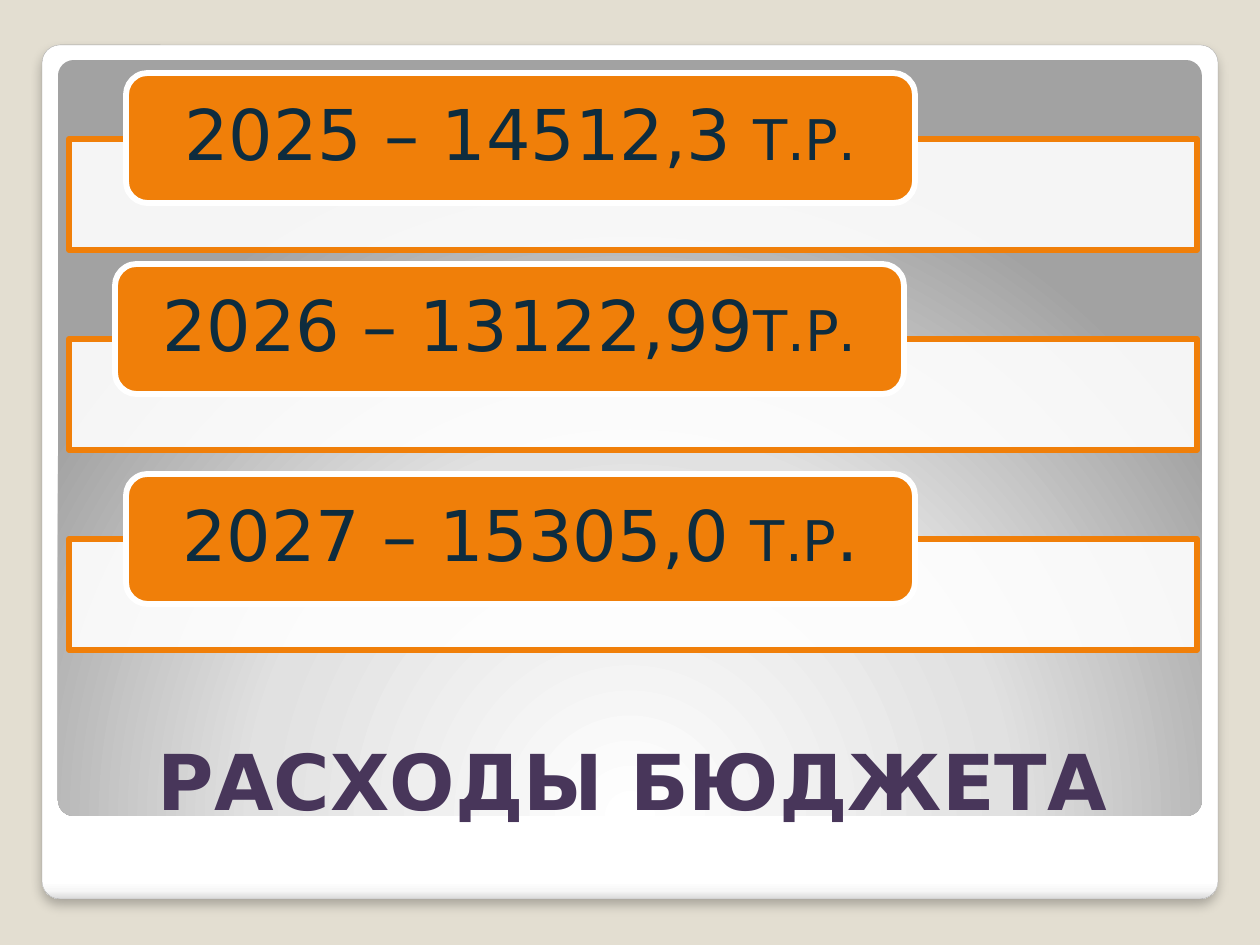
from dataclasses import dataclass

from lxml import etree
from pptx import Presentation
from pptx.dml.color import RGBColor
from pptx.enum.shapes import MSO_SHAPE
from pptx.enum.text import MSO_ANCHOR, PP_ALIGN
from pptx.oxml import parse_xml
from pptx.oxml.ns import nsdecls, qn
from pptx.util import Emu, Pt

RECTANGLE = MSO_SHAPE.RECTANGLE
ROUNDED = MSO_SHAPE.ROUNDED_RECTANGLE
CENTER = PP_ALIGN.CENTER
MIDDLE, BOTTOM = MSO_ANCHOR.MIDDLE, MSO_ANCHOR.BOTTOM
PX_PER_INCH = 126


@dataclass(frozen=True)
class Theme:
    font: str = "DejaVu Sans"
    background: str = "E3DED1"
    white: str = "FFFFFF"
    orange: str = "F07F09"
    frame_line: str = "A4A4A4"
    label_text: str = "0E2C3E"
    title_text: str = "48365A"
    frame_stops: tuple = ((0, "FFFFFF"), (98, "FFFFFF"), (99, "F7F7F7"), (100, "DADADA"))
    panel_stops: tuple = ((0, "FFFFFF"), (55, "E1E1E1"), (100, "A2A2A2"))
    title_size: int = 44
    amount_size: int = 40
    unit_size: int = 32
    line_width: float = 3.35


THEME = Theme()

# Per year: label left and top, then text runs with their sizes
BUDGET_ROWS = (
    (126, 73, (("2025 – 14512,3 ", THEME.amount_size), ("Т.Р.", THEME.unit_size))),
    (115, 264, (("2026 – 13122,99", THEME.amount_size), ("Т.Р.", THEME.unit_size))),
    (126, 474, (("2027 – 15305,0 ", THEME.amount_size), ("Т.Р", THEME.unit_size),
                (".", THEME.amount_size))),
)
BAR_TOP, BAR_STEP = 139, 200


def px(value):
    return Emu(round(value * 914400 / PX_PER_INCH))


def color(value):
    return RGBColor.from_string(value)


def add_box(slide, kind, left, top, width, height, fill=None, line=None,
            line_width=THEME.line_width, corner=None):
    shape = slide.shapes.add_shape(kind, px(left), px(top), px(width), px(height))
    shape.shadow.inherit = False
    if corner is not None:
        shape.adjustments[0] = corner
    if fill:
        shape.fill.solid()
        shape.fill.fore_color.rgb = color(fill)
    else:
        shape.fill.background()
    if line:
        shape.line.color.rgb = color(line)
        shape.line.width = Pt(line_width)
    else:
        shape.line.fill.background()
    return shape


def set_gradient(shape, stops, direction):
    stop_xml = "".join(
        f'<a:gs pos="{position * 1000}"><a:srgbClr val="{value}"/></a:gs>'
        for position, value in stops)
    gradient = parse_xml(f'<a:gradFill {nsdecls("a")} rotWithShape="1">'
                         f'<a:gsLst>{stop_xml}</a:gsLst>{direction}</a:gradFill>')
    properties = shape._element.spPr
    properties.replace(properties.find(qn("a:noFill")), gradient)


def set_opacity(shape, percent):
    fill_color = shape._element.spPr.find(qn("a:solidFill"))[0]
    etree.SubElement(fill_color, qn("a:alpha"), val=str(percent * 1000))


def add_soft_shadow(shape):
    effects = shape._element.spPr.find(qn("a:effectLst"))
    effects.append(parse_xml(
        f'<a:outerShdw {nsdecls("a")} blurRad="{Pt(6)}" dist="{Pt(4)}" dir="5400000" '
        'algn="tl" rotWithShape="0"><a:srgbClr val="000000"><a:alpha val="25000"/>'
        '</a:srgbClr></a:outerShdw>'))


def write_text(shape, runs, text_color, anchor, bold=False):
    frame = shape.text_frame
    frame.word_wrap = True
    frame.vertical_anchor = anchor
    paragraph = frame.paragraphs[0]
    paragraph.alignment = CENTER
    for text, size in runs:
        run = paragraph.add_run()
        run.text = text
        run.font.name = THEME.font
        run.font.size = Pt(size)
        run.font.bold = bold
        run.font.color.rgb = color(text_color)
    return frame


def add_backdrop(slide):
    slide.background.fill.solid()
    slide.background.fill.fore_color.rgb = color(THEME.background)
    frame = add_box(slide, ROUNDED, 42, 45, 1176, 854, line=THEME.frame_line,
                    line_width=0.16, corner=0.021)
    set_gradient(frame, THEME.frame_stops, '<a:lin ang="5400000" scaled="0"/>')
    add_soft_shadow(frame)
    panel = add_box(slide, ROUNDED, 58, 60, 1144, 756, corner=0.021)
    set_gradient(panel, THEME.panel_stops,
                 '<a:path path="circle"><a:fillToRect l="50000" t="175000" '
                 'r="50000" b="-75000"/></a:path>')


def add_title(slide):
    title = slide.shapes.add_textbox(px(69), px(687), px(1128), px(145))
    write_text(title, [("РАСХОДЫ БЮДЖЕТА", THEME.title_size)],
               THEME.title_text, BOTTOM, bold=True)


def add_budget_row(slide, bar_top, label_left, label_top, runs):
    bar = add_box(slide, RECTANGLE, 69, bar_top, 1128, 111, THEME.white, THEME.orange)
    set_opacity(bar, 90)
    label = add_box(slide, ROUNDED, label_left, label_top, 789, 130,
                    THEME.orange, THEME.white)
    frame = write_text(label, runs, THEME.label_text, MIDDLE)
    frame.margin_left = frame.margin_right = px(30)
    frame.margin_top = frame.margin_bottom = 0
    frame.paragraphs[0].line_spacing = 0.9


def main():
    presentation = Presentation()
    presentation.slide_width, presentation.slide_height = px(1260), px(945)
    slide = presentation.slides.add_slide(presentation.slide_layouts[6])

    # Framed background and heading
    add_backdrop(slide)
    add_title(slide)

    # One bar with a label per year
    for index, row in enumerate(BUDGET_ROWS):
        add_budget_row(slide, BAR_TOP + index * BAR_STEP, *row)

    presentation.save("out.pptx")


if __name__ == "__main__":
    main()
